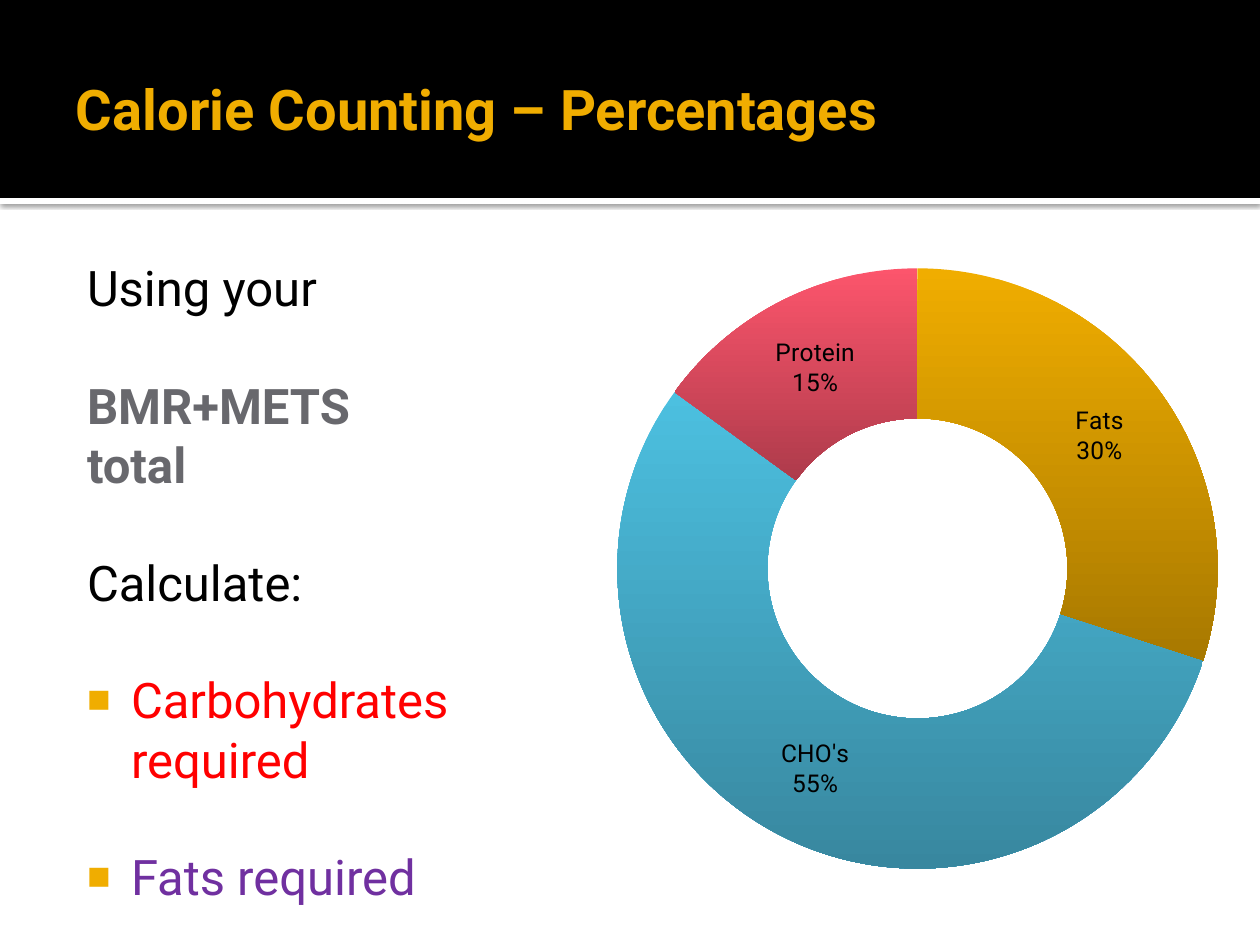
"""Build the slide on calorie percentages with a doughnut chart."""
from dataclasses import dataclass

from lxml import etree
from pptx import Presentation
from pptx.chart.data import CategoryChartData
from pptx.dml.color import RGBColor
from pptx.enum.chart import XL_CHART_TYPE
from pptx.enum.shapes import MSO_SHAPE
from pptx.enum.text import MSO_ANCHOR, MSO_AUTO_SIZE, PP_ALIGN
from pptx.oxml import parse_xml
from pptx.oxml.ns import nsdecls, qn
from pptx.util import Emu, Pt

DOUGHNUT = XL_CHART_TYPE.DOUGHNUT
RECTANGLE = MSO_SHAPE.RECTANGLE
LEFT = PP_ALIGN.LEFT
TOP, MIDDLE = MSO_ANCHOR.TOP, MSO_ANCHOR.MIDDLE


@dataclass(frozen=True)
class Theme:
    font: str = "Roboto"
    chart_font: str = "Calibri"
    black: str = "000000"
    white: str = "FFFFFF"
    gold: str = "F0AD00"
    grey: str = "68686D"
    red: str = "FF0000"
    purple: str = "7030A0"
    title_size: float = 32
    body_size: float = 28
    chart_size: float = 18
    label_size: float = 14
    gap: float = 33.3


THEME = Theme()
TITLE = "Calorie Counting – Percentages"
STEPS = [
    ("Using your", dict(color=THEME.black)),
    ("BMR+METS", dict(color=THEME.grey, bold=True, before=THEME.gap)),
    ("total", dict(color=THEME.grey, bold=True)),
    ("Calculate:", dict(color=THEME.black, before=THEME.gap)),
    ("Carbohydrates required", dict(color=THEME.red, before=THEME.gap, bullet=True)),
    ("Fats required", dict(color=THEME.purple, before=THEME.gap, bullet=True)),
]
SHARES = [
    ("Fats", 30, ("F0AD00", "A87900")),
    ("CHO's", 55, ("4CC0E0", "38879F")),
    ("Protein", 15, ("FC556C", "AE3B4B")),
]
BANDS = [((0, 198, 1260, 6), THEME.white, True), ((0, 0, 1260, 198), THEME.black, False)]
TITLE_BOX = (63, 21, 1134, 173)
BODY_BOX = (63, 244, 567, 638)
CHART_BOX = (600, 224, 635, 689)


def px(length):
    return Emu(round(length * 914400 / 126))


def place(shape, box):
    shape.left, shape.top, shape.width, shape.height = map(px, box)


def set_frame(frame, insets, anchor):
    frame.margin_left, frame.margin_top, frame.margin_right, frame.margin_bottom = map(px, insets)
    frame.vertical_anchor = anchor
    frame.word_wrap = True
    frame.auto_size = MSO_AUTO_SIZE.NONE


def write(paragraph, text, *, size, color, bold=False, before=0, bullet=False, margin=0, hanging=0):
    paragraph.alignment = LEFT
    paragraph.line_spacing = 1.01
    paragraph.space_before, paragraph.space_after = Pt(before), Pt(0)
    run = paragraph.add_run()
    run.text = text
    run.font.name, run.font.size, run.font.bold = THEME.font, Pt(size), bold
    run.font.color.rgb = RGBColor.from_string(color)
    properties = paragraph._p.get_or_add_pPr()
    properties.set("marL", str(px(margin)))
    properties.set("indent", str(px(-hanging)))
    if not bullet:
        etree.SubElement(properties, qn("a:buNone"))
        return
    bullet_color = etree.SubElement(properties, qn("a:buClr"))
    etree.SubElement(bullet_color, qn("a:srgbClr"), val=THEME.gold)
    etree.SubElement(properties, qn("a:buSzPct"), val="80000")
    etree.SubElement(properties, qn("a:buChar"), char="■")


def add_band(slide, box, color, shadowed, depth):
    band = slide.shapes.add_shape(RECTANGLE, *map(px, box))
    band.shadow.inherit = False
    band.fill.solid()
    band.fill.fore_color.rgb = RGBColor.from_string(color)
    band.line.fill.background()
    if shadowed:
        effects = band._element.spPr.find(qn("a:effectLst"))
        effects.append(parse_xml(
            f'<a:outerShdw {nsdecls("a")} blurRad="{Pt(2.5)}" dist="{Pt(0.8)}" dir="5400000" '
            f'algn="t" rotWithShape="0"><a:srgbClr val="{THEME.black}">'
            '<a:alpha val="60000"/></a:srgbClr></a:outerShdw>'))
    slide.shapes._spTree.insert(2 + depth, band._element)


def add_shares_chart(slide):
    data = CategoryChartData()
    data.categories = [name for name, _, _ in SHARES]
    data.add_series("Series 1", [share for _, share, _ in SHARES])
    chart = slide.shapes.add_chart(DOUGHNUT, *map(px, CHART_BOX), data).chart
    chart.has_title = chart.has_legend = False
    chart.font.name, chart.font.size = THEME.chart_font, Pt(THEME.chart_size)
    chart.font.color.rgb = RGBColor.from_string(THEME.black)
    plot = chart.plots[0]
    plot.vary_by_categories = True
    series = plot.series[0]
    for index, (_, _, colors) in enumerate(SHARES):
        point = series.points[index].format
        point.line.fill.background()
        point.fill.gradient()
        point.fill.gradient_angle = 270
        for stop, color in zip(point.fill.gradient_stops, colors):
            stop.color.rgb = RGBColor.from_string(color)
    labels = series.data_labels
    labels.show_percentage = labels.show_category_name = True
    labels.show_value = False
    labels.font.name, labels.font.size = THEME.font, Pt(THEME.label_size)
    labels.font.color.rgb = RGBColor.from_string(THEME.black)
    separator = etree.Element(qn("c:separator"))
    separator.text = "\n"
    labels._element.find(qn("c:showBubbleSize")).addnext(separator)
    plot._element.find(qn("c:holeSize")).set("val", "50")


def main():
    deck = Presentation()
    deck.slide_width, deck.slide_height = px(1260), px(945)
    slide = deck.slides.add_slide(deck.slide_layouts[1])
    title, body = slide.placeholders
    for depth, band in enumerate(BANDS):
        add_band(slide, *band, depth)

    place(title, TITLE_BOX)
    set_frame(title.text_frame, (13, 6, 6, 6), MIDDLE)
    write(title.text_frame.paragraphs[0], TITLE, size=THEME.title_size, color=THEME.gold, bold=True)

    place(body, BODY_BOX)
    frame = body.text_frame
    set_frame(frame, (8, 13, 13, 6), TOP)
    for index, (text, style) in enumerate(STEPS):
        paragraph = frame.add_paragraph() if index else frame.paragraphs[0]
        margin, hanging = (60, 44) if style.get("bullet") else (16, 0)
        write(paragraph, text, size=THEME.body_size, margin=margin, hanging=hanging, **style)

    add_shares_chart(slide)
    deck.save("out.pptx")


if __name__ == "__main__":
    main()
